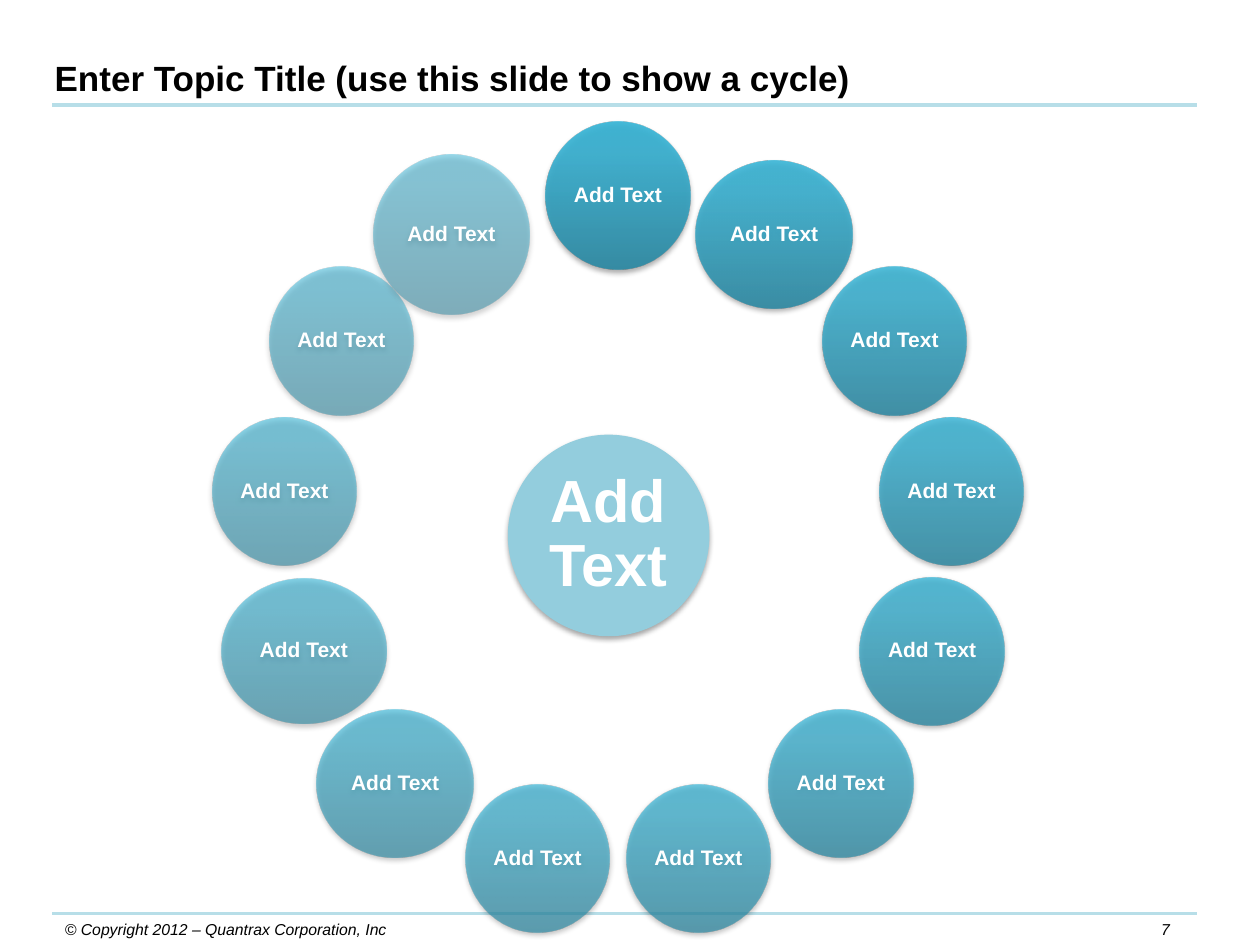
from math import cos, pi, sin

from lxml import etree
from pptx import Presentation
from pptx.dml.color import RGBColor
from pptx.enum.shapes import MSO_CONNECTOR as Link, MSO_SHAPE as Form
from pptx.enum.text import MSO_ANCHOR as Anchor, MSO_AUTO_SIZE as Fit, PP_ALIGN as Align
from pptx.oxml import parse_xml
from pptx.oxml.ns import nsdecls, qn
from pptx.util import Pt

BLACK = RGBColor(0x00, 0x00, 0x00)
WHITE = RGBColor(0xFF, 0xFF, 0xFF)
RULE = RGBColor(0xB7, 0xDE, 0xE8)
HUB = RGBColor(0x93, 0xCD, 0xDD)
DARK = RGBColor(0x2A, 0x88, 0xA2)
MID = RGBColor(0x37, 0xB1, 0xD2)
LIGHT = RGBColor(0x34, 0xB4, 0xD6)


def set_font(para, size, color, bold=False, italic=False):
    font = para.font
    font.name, font.size = "Arial", Pt(size)
    font.bold, font.italic = bold, italic
    font.color.rgb = color


def add_disc(x, y, wide, high, size, inset):
    """Add a labelled, softly shadowed ellipse centred on x, y."""
    disc = slide.shapes.add_shape(
        Form.OVAL, Pt(x - wide / 2), Pt(y - high / 2), Pt(wide), Pt(high))
    disc.line.fill.background()
    disc.shadow.inherit = False
    disc._element.spPr.find(qn("a:effectLst")).append(parse_xml(
        f'<a:outerShdw {nsdecls("a")} blurRad="{Pt(3.1)}" dist="{Pt(1.8)}" '
        'dir="5400000" rotWithShape="0"><a:srgbClr val="000000">'
        '<a:alpha val="35000"/></a:srgbClr></a:outerShdw>'))
    frame = disc.text_frame
    frame.word_wrap = True
    frame.vertical_anchor = Anchor.MIDDLE
    frame.margin_left = frame.margin_right = Pt(inset)
    frame.margin_top = frame.margin_bottom = Pt(inset)
    para = frame.paragraphs[0]
    para.text = "Add Text"
    para.alignment = Align.CENTER
    para.line_spacing = 0.9
    set_font(para, size, WHITE, bold=True)
    return disc


deck = Presentation()
deck.slide_width, deck.slide_height = Pt(720), Pt(540)
slide = deck.slides.add_slide(deck.slide_layouts[5])

# Title
title = slide.shapes.title
title.left, title.top, title.width, title.height = Pt(24), Pt(28.8), Pt(492), Pt(31.5)
title.text = "Enter Topic Title (use this slide to show a cycle)"
title.text_frame.auto_size = Fit.SHAPE_TO_FIT_TEXT
title.text_frame.vertical_anchor = Anchor.TOP
head = title.text_frame.paragraphs[0]
head.alignment = Align.LEFT
set_font(head, 20, BLACK, bold=True)

# Rules under the title and above the footer
for y in (60, 522):
    rule = slide.shapes.add_connector(Link.STRAIGHT, Pt(30), Pt(y), Pt(684), Pt(y))
    rule.line.color.rgb = RULE
    rule.line.width = Pt(2.25)
    etree.SubElement(rule._element.spPr, qn("a:effectLst"))

# Footer
for x, wide, text, align in (
        (648, 36, "7", Align.CENTER),
        (30, 234, "© Copyright 2012 – Quantrax Corporation, Inc", Align.LEFT)):
    box = slide.shapes.add_textbox(Pt(x), Pt(522), Pt(wide), Pt(18))
    box.text_frame.word_wrap = True
    box.text_frame.auto_size = Fit.SHAPE_TO_FIT_TEXT
    para = box.text_frame.paragraphs[0]
    para.text = text
    para.alignment = align
    set_font(para, 9, BLACK, italic=True)

# Hub of the cycle
hub = add_disc(347.8, 306, 115.2, 115.2, 34, 3.6)
hub.fill.solid()
hub.fill.fore_color.rgb = HUB

# Ring of steps, clockwise from the top and fading from 90 % to 50 %
COUNT, RADIUS, MID_X, MID_Y = 13, 192, 353.2, 304
SIZES = {1: (89.5, 84.5), 8: (89.5, 84.5), 9: (94, 83), 12: (89.5, 91.5)}
SHIFT = {12: -6}
for i in range(COUNT):
    turn = 2 * pi * i / COUNT
    wide, high = SIZES.get(i, (82.5, 84.5))
    step = add_disc(MID_X + RADIUS * sin(turn) + SHIFT.get(i, 0),
                    MID_Y - RADIUS * cos(turn), wide, high, 12, 1.5)
    step.fill.gradient()
    step.fill.gradient_angle = 90
    stops = step._element.spPr.find(".//" + qn("a:gsLst"))
    alpha = round(90000 - 40000 * i / (COUNT - 1))
    stops[:] = [parse_xml(
        f'<a:gs {nsdecls("a")} pos="{pos}"><a:srgbClr val="{color}">'
        f'<a:alpha val="{alpha}"/></a:srgbClr></a:gs>')
        for pos, color in ((0, DARK), (80000, MID), (100000, LIGHT))]

deck.save("out.pptx")
